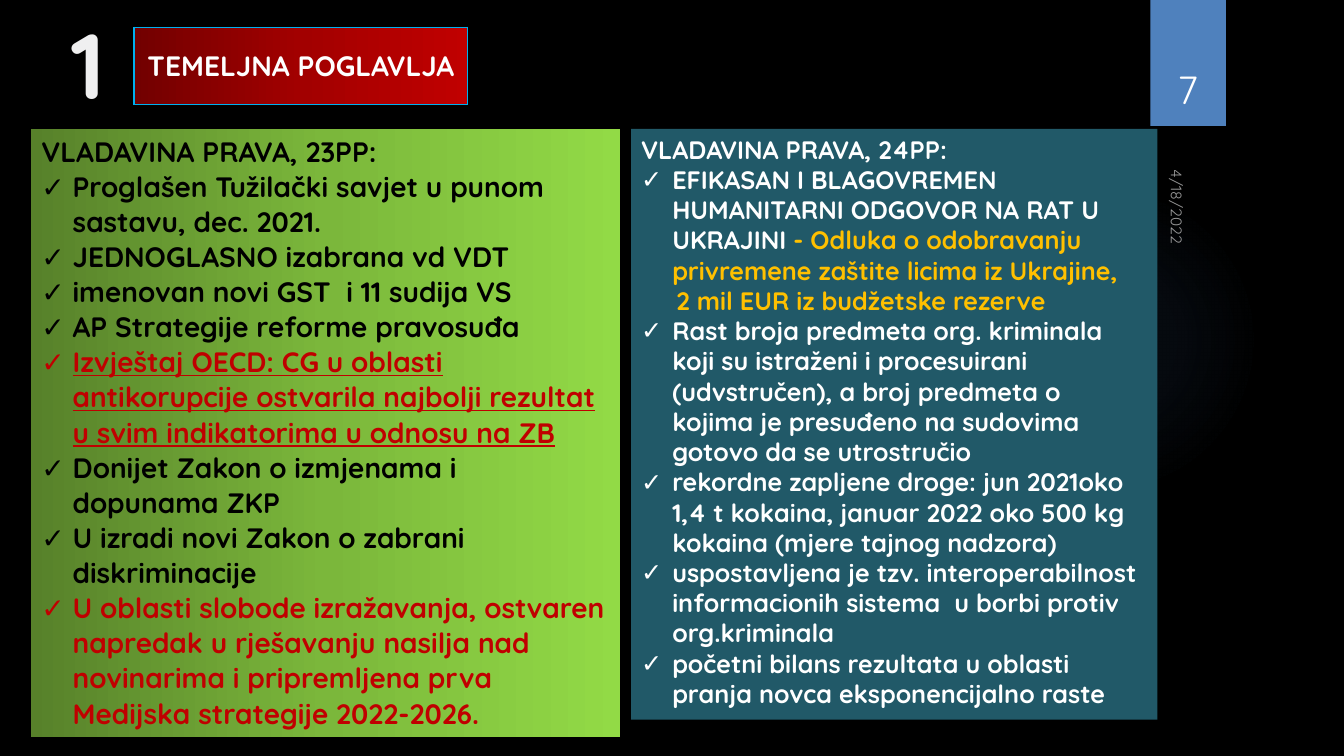
from dataclasses import dataclass

from lxml import etree
from pptx import Presentation
from pptx.dml.color import RGBColor
from pptx.enum import shapes, text
from pptx.oxml import ns
from pptx.util import Inches, Pt

FONT = "Quicksand"
HANG = 0.31
NO_STYLE = "{2D5ABB26-0587-4C30-8999-92F81FD0307C}"
COLOURS = {
    "black": "000000", "white": "FFFFFF", "off_white": "FCFCFD", "outline": "101A26",
    "red": "C00000", "amber": "FFC000", "teal": "215968", "blue": "4F81BD",
    "glow": "558ED5", "cyan": "00B0F0",
}


@dataclass
class Stop:
    position: int
    colour: str
    alpha: int = 100


@dataclass
class Line:
    words: str
    colour: str = "black"
    bullet: bool = True
    indent: float = 0
    underline: bool = False
    tail: str = ""
    tail_colour: str = "amber"


GREENS = [Stop(0, "57812A"), Stop(50, "7BB73B"), Stop(100, "92DA46")]
REDS = [Stop(0, "720000"), Stop(50, "A20000"), Stop(100, "C00000")]
GLOW = [Stop(0, COLOURS["glow"], 7), Stop(36, COLOURS["glow"], 6), Stop(69, COLOURS["glow"], 0)]

CHAPTER_23 = [
    Line("VLADAVINA PRAVA, 23PP:", bullet=False),
    Line("Proglašen Tužilački savjet u punom sastavu, dec. 2021."),
    Line("JEDNOGLASNO izabrana vd VDT"),
    Line("imenovan novi GST  i 11 sudija VS"),
    Line("AP Strategije reforme pravosuđa"),
    Line("Izvještaj OECD: CG u oblasti antikorupcije ostvarila najbolji rezultat "
         "u svim indikatorima u odnosu na ZB", "red", underline=True),
    Line("Donijet Zakon o izmjenama i dopunama ZKP"),
    Line("U izradi novi Zakon o zabrani diskriminacije"),
    Line("U oblasti slobode izražavanja, ostvaren napredak u rješavanju nasilja nad "
         "novinarima i pripremljena prva Medijska strategije 2022-2026.", "red"),
]
CHAPTER_24 = [
    Line("VLADAVINA PRAVA, 24PP:", "white", bullet=False),
    Line("EFIKASAN I BLAGOVREMEN HUMANITARNI ODGOVOR NA RAT U UKRAJINI ", "white",
         tail="- Odluka o odobravanju privremene zaštite licima iz Ukrajine,"),
    Line("2 mil EUR iz budžetske rezerve", "amber", bullet=False, indent=0.35),
    Line("Rast broja predmeta org. kriminala koji su istraženi i procesuirani (udvstručen), "
         "a broj predmeta o kojima je presuđeno na sudovima gotovo da se utrostručio", "white"),
    Line("rekordne zapljene droge: jun 2021oko 1,4 t kokaina, januar 2022 oko 500 kg "
         "kokaina (mjere tajnog nadzora)", "white"),
    Line("uspostavljena je tzv. interoperabilnost informacionih sistema  u borbi protiv "
         "org.kriminala", "white"),
    Line("početni bilans rezultata u oblasti pranja novca eksponencijalno raste", "white"),
]


def rgb(name: str) -> RGBColor:
    return RGBColor.from_string(COLOURS[name])


def sub(parent, tag: str, **attributes):
    return etree.SubElement(parent, ns.qn(f"a:{tag}"),
                            {key: str(value) for key, value in attributes.items()})


def add_colour(parent, colour: str, alpha: int = 100) -> None:
    node = sub(parent, "srgbClr", val=colour)
    if alpha < 100:
        sub(node, "alpha", val=alpha * 1000)


def add_gradient(parent, stops: list[Stop], radial: bool = False):
    gradient = sub(parent, "gradFill", rotWithShape=1)
    stop_list = sub(gradient, "gsLst")
    for stop in stops:
        add_colour(sub(stop_list, "gs", pos=stop.position * 1000), stop.colour, stop.alpha)
    if radial:
        centre = sub(gradient, "path", path="circle")
        sub(centre, "fillToRect", l=50000, t=50000, r=50000, b=50000)
    else:
        sub(gradient, "lin", ang=0, scaled=0)
    return gradient


def style(paragraph, size: float, colour: str, bold: bool = False, alpha: int = 100) -> None:
    font = paragraph.font
    font.name, font.size, font.bold = FONT, Pt(size), bold
    font.color.rgb = rgb(colour)
    if alpha < 100:
        sub(font._rPr.find(".//" + ns.qn("a:srgbClr")), "alpha", val=alpha * 1000)


def write_lines(frame, lines: list[Line], size: float) -> None:
    for index, line in enumerate(lines):
        paragraph = frame.paragraphs[0] if index == 0 else frame.add_paragraph()
        paragraph.alignment = text.PP_ALIGN.LEFT
        properties = paragraph._p.get_or_add_pPr()
        indent = HANG if line.bullet else line.indent
        properties.set("marL", str(Inches(indent)))
        properties.set("indent", str(Inches(-HANG if line.bullet else 0)))
        if line.bullet:
            sub(properties, "buFont", typeface=FONT)
            sub(properties, "buChar", char="✓")
        style(paragraph, size, line.colour, bold=True)
        if line.underline:
            paragraph.font.underline = True
        paragraph.add_run().text = line.words
        if line.tail:
            tail = paragraph.add_run()
            tail.text = line.tail
            tail.font.color.rgb = rgb(line.tail_colour)


def add_plain_shape(slide, preset, left: float, top: float, width: float, height: float,
                    fill: str):
    shape = slide.shapes.add_shape(preset, Inches(left), Inches(top),
                                   Inches(width), Inches(height))
    shape.shadow.inherit = False
    shape.fill.solid()
    shape.fill.fore_color.rgb = rgb(fill)
    shape.line.fill.background()
    return shape


def add_label(slide, words: str, left: float, top: float, width: float, height: float):
    label = slide.shapes.add_textbox(Inches(left), Inches(top), Inches(width), Inches(height))
    label.text_frame.word_wrap = True
    paragraph = label.text_frame.paragraphs[0]
    paragraph.add_run().text = words
    return label, paragraph


def add_gradient_cell(slide, left: float, top: float, width: float, height: float,
                      stops: list[Stop], border: str = ""):
    """Adds a one-cell table and returns its cell."""
    table = slide.shapes.add_table(1, 1, Inches(left), Inches(top),
                                   Inches(width), Inches(height)).table
    table.first_row = table.horz_banding = False
    table._tbl.tblPr.find(ns.qn("a:tableStyleId")).text = NO_STYLE
    cell = table.cell(0, 0)
    properties = cell._tc.get_or_add_tcPr()
    if border:
        for side in ("lnL", "lnR", "lnT", "lnB"):
            add_colour(sub(sub(properties, side, w=Pt(1)), "solidFill"), COLOURS[border])
    add_gradient(properties, stops)
    return cell


def main() -> None:
    deck = Presentation()
    deck.slide_width, deck.slide_height = Inches(13.33), Inches(7.5)
    slide = deck.slides.add_slide(deck.slide_layouts[6])
    slide.background.fill.solid()
    slide.background.fill.fore_color.rgb = rgb("black")

    preset = shapes.MSO_SHAPE
    glow = add_plain_shape(slide, preset.OVAL, 9.41, 1.83, 3.08, 3.08, "glow")
    solid = glow._element.spPr.find(ns.qn("a:solidFill"))
    solid.getparent().replace(solid, add_gradient(glow._element.spPr, GLOW, radial=True))

    page_tab = add_plain_shape(slide, preset.RECTANGLE, 11.41, 0, 0.75, 1.25, "blue")
    effects = page_tab._element.spPr.find(ns.qn("a:effectLst"))
    shadow = sub(effects, "outerShdw", blurRad=Pt(3), dist=Pt(2), dir=5400000, rotWithShape=0)
    add_colour(shadow, COLOURS["black"], 45)

    date, date_line = add_label(slide, "4/18/2022", 11.11, 1.96, 1.08, 0.33)
    date.rotation = 90
    style(date_line, 11, "white", alpha=60)

    page, page_line = add_label(slide, "7", 11.32, 0.32, 0.92, 0.84)
    page.text_frame.vertical_anchor = text.MSO_ANCHOR.BOTTOM
    page_line.alignment = text.PP_ALIGN.CENTER
    style(page_line, 28, "white")

    chapter_23 = add_gradient_cell(slide, 0.31, 1.28, 5.84, 6.03, GREENS)
    write_lines(chapter_23.text_frame, CHAPTER_23, 20)

    numeral, numeral_line = add_label(slide, "1", 0.51, 0.02, 0.73, 1.21)
    numeral.text_frame.word_wrap = False
    numeral_line.alignment = text.PP_ALIGN.CENTER
    style(numeral_line, 66, "off_white", bold=True, alpha=95)
    numeral_font = numeral_line.font._rPr
    numeral_font.set("spc", "50")
    outline = sub(numeral_font, "ln", w=Pt(1.06))
    add_colour(sub(outline, "solidFill"), COLOURS["outline"], 6)
    numeral_font.insert(0, outline)

    heading = add_gradient_cell(slide, 1.33, 0.27, 3.31, 0.77, REDS, border="cyan")
    heading.vertical_anchor = text.MSO_ANCHOR.MIDDLE
    heading_line = heading.text_frame.paragraphs[0]
    heading_line.alignment = text.PP_ALIGN.CENTER
    style(heading_line, 20, "white", bold=True)
    heading_line.add_run().text = "TEMELJNA POGLAVLJA"

    chapter_24 = add_plain_shape(slide, preset.RECTANGLE, 6.26, 1.28, 5.22, 5.86, "teal")
    chapter_24.text_frame.word_wrap = True
    chapter_24.text_frame.vertical_anchor = text.MSO_ANCHOR.TOP
    chapter_24.text_frame.auto_size = text.MSO_AUTO_SIZE.SHAPE_TO_FIT_TEXT
    write_lines(chapter_24.text_frame, CHAPTER_24, 18)

    deck.save("out.pptx")


if __name__ == "__main__":
    main()
